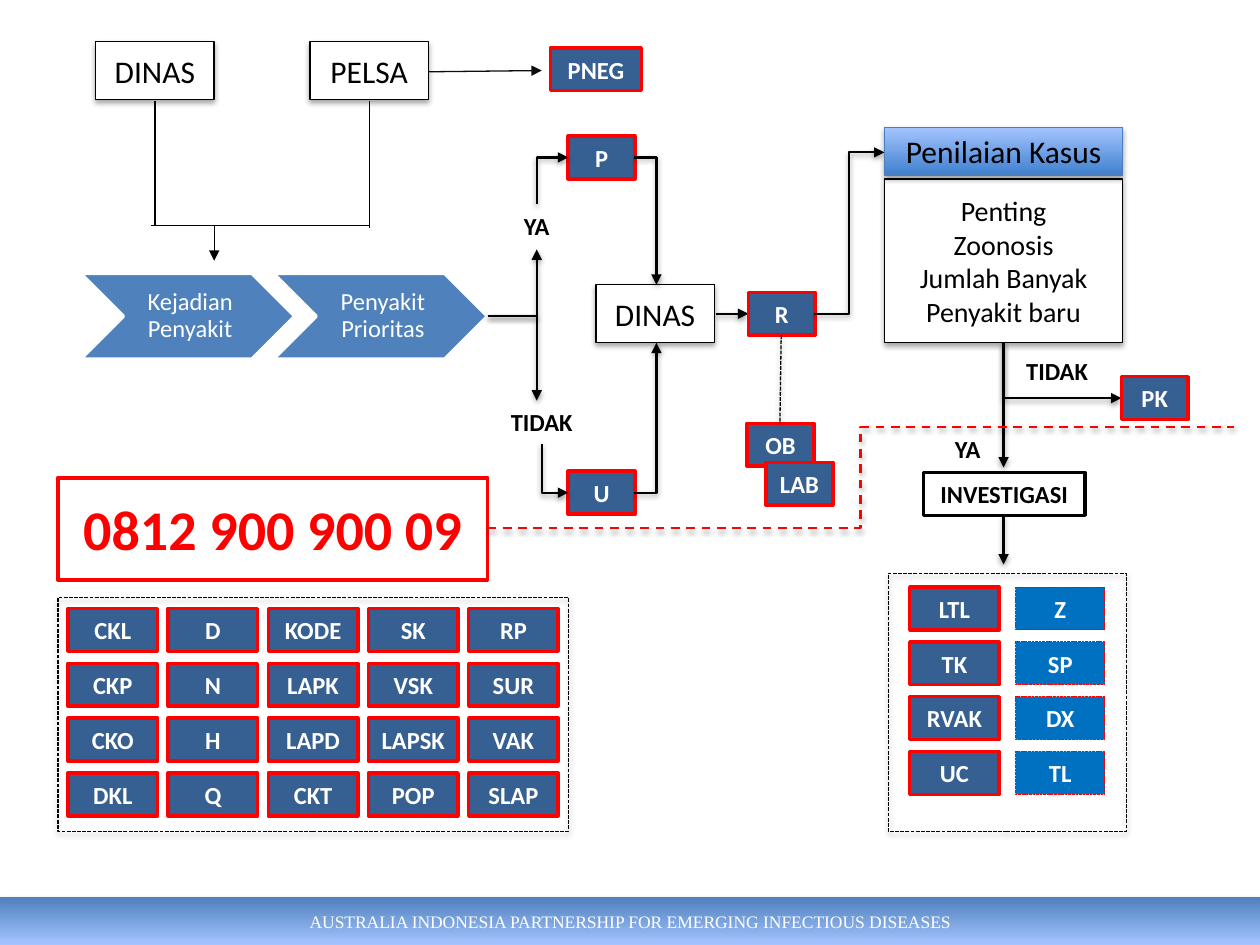
from lxml import etree
from pptx import Presentation
from pptx.dml.color import RGBColor
from pptx.enum.dml import MSO_LINE
from pptx.enum.shapes import MSO_CONNECTOR, MSO_SHAPE
from pptx.enum.text import MSO_ANCHOR, PP_ALIGN
from pptx.oxml.ns import qn
from pptx.util import Inches, Pt

RECT, CHEVRON = MSO_SHAPE.RECTANGLE, MSO_SHAPE.CHEVRON
STRAIGHT, ELBOW = MSO_CONNECTOR.STRAIGHT, MSO_CONNECTOR.ELBOW
DASH, FINE_DASH = MSO_LINE.DASH, MSO_LINE.SQUARE_DOT
MIDDLE, CENTER = MSO_ANCHOR.MIDDLE, PP_ALIGN.CENTER

BLACK, WHITE, RED = "000000", "FFFFFF", "FF0000"
NAVY, BLUE, STEEL, SKY = "376092", "0070C0", "4F81BD", "A4C4FF"
CODE_HEIGHT = 0.34
ROW_STEP = 0.435


def rgb(value):
    return RGBColor.from_string(value)


def add_shadow(drawn, opacity, distance):
    properties = drawn._element.spPr
    effects = properties.find(qn("a:effectLst"))
    if effects is None:
        effects = etree.SubElement(properties, qn("a:effectLst"))
    if opacity:
        shadow = etree.SubElement(effects, qn("a:outerShdw"), blurRad="40000",
                                  dist=str(distance), dir="5400000", rotWithShape="0")
        color = etree.SubElement(shadow, qn("a:srgbClr"), val=BLACK)
        etree.SubElement(color, qn("a:alpha"), val=str(opacity * 1000))


def write(frame, lines, size, color, bold=False, font="Calibri", spacing=None):
    frame.vertical_anchor = MIDDLE
    for index, line in enumerate(lines):
        paragraph = frame.paragraphs[0] if index == 0 else frame.add_paragraph()
        paragraph.alignment = CENTER
        paragraph.line_spacing = spacing
        run = paragraph.add_run()
        run.text = line
        run.font.name = font
        run.font.size = Pt(size)
        run.font.bold = bold
        run.font.color.rgb = rgb(color)


def panel(slide, left, top, width, height, fill=None, line=None, weight=0.75,
          dash=None, shadow=False, gradient=None, angle=0, form=RECT):
    shape = slide.shapes.add_shape(form, Inches(left), Inches(top), Inches(width), Inches(height))
    shape.shadow.inherit = False
    if gradient:
        shape.fill.gradient()
        shape.fill.gradient_angle = angle
        for stop, color in zip(shape.fill.gradient_stops, gradient):
            stop.color.rgb = rgb(color)
    elif fill:
        shape.fill.solid()
        shape.fill.fore_color.rgb = rgb(fill)
    else:
        shape.fill.background()
    if line:
        shape.line.color.rgb = rgb(line)
        shape.line.width = Pt(weight)
        if dash:
            shape.line.dash_style = dash
    else:
        shape.line.fill.background()
    if shadow:
        add_shadow(shape, 35, 23000)
    return shape


def code(slide, left, top, text, width=0.53, fill=NAVY, line=RED, weight=2, dash=None, color=WHITE):
    shape = panel(slide, left, top, width, CODE_HEIGHT, fill, line, weight, dash)
    shape.text_frame.word_wrap = False
    write(shape.text_frame, [text], 14, color, bold=True)


def office(slide, left, top, text):
    shape = panel(slide, left, top, 0.94, 0.46, WHITE, BLACK, shadow=True)
    write(shape.text_frame, [text], 18, BLACK)


def answer(slide, left, top, text, width):
    label = slide.shapes.add_textbox(Inches(left), Inches(top), Inches(width), Inches(CODE_HEIGHT))
    label.text_frame.word_wrap = True
    write(label.text_frame, [text], 14, BLACK, bold=True)


def link(slide, x1, y1, x2, y2, kind=STRAIGHT, weight=1.25, color=BLACK, arrow=True,
         dash=None, shadow=True):
    connector = slide.shapes.add_connector(kind, Inches(x1), Inches(y1), Inches(x2), Inches(y2))
    connector.line.color.rgb = rgb(color)
    connector.line.width = Pt(weight)
    if dash:
        connector.line.dash_style = dash
    properties = connector._element.spPr
    if arrow:
        etree.SubElement(properties.find(qn("a:ln")), qn("a:tailEnd"), type="triangle")
    add_shadow(connector, 38 if shadow else 0, 20000)
    return connector


def corner(slide, x1, y1, x2, y2, vertical_first=False):
    connector = link(slide, x1, y1, x2, y2, ELBOW)
    properties = connector._element.spPr
    properties.find(qn("a:prstGeom")).set("prst", "bentConnector2")
    if vertical_first:
        across, down = abs(x2 - x1), abs(y2 - y1)
        connector.left = Inches((x1 + x2 - down) / 2)
        connector.top = Inches((y1 + y2 - across) / 2)
        connector.width, connector.height = Inches(down), Inches(across)
        transform = properties.find(qn("a:xfrm"))
        transform.set("flipH", "1")
        transform.set("rot", "16200000" if y2 > y1 else "5400000")


def code_grid(slide, left, top, columns, step, **style):
    for column, names in enumerate(columns):
        for row, name in enumerate(names):
            code(slide, left + column * step, top + row * ROW_STEP, name, 0.71, **style)


def report_sources(slide, left, top):
    office(slide, left, top, "DINAS")
    office(slide, left + 1.7, top, "PELSA")
    code(slide, left + 3.61, top + 0.05, "PNEG", 0.72)
    plain = {"weight": 0.75, "shadow": False}
    join = top + 1.46
    link(slide, left + 0.47, top + 0.47, left + 0.47, join, arrow=False, **plain)
    link(slide, left + 2.17, top + 0.47, left + 2.17, join + 0.02, arrow=False, **plain)
    link(slide, left + 2.17, join, left + 0.44, join, arrow=False, **plain)
    link(slide, left + 0.94, join, left + 0.94, join + 0.28, **plain)
    link(slide, left + 2.64, top + 0.24, left + 3.54, top + 0.23, color="0D0D0D", **plain)


def event_steps(slide, left, top):
    for index, step in enumerate(("Kejadian Penyakit", "Penyakit Prioritas")):
        chevron = panel(slide, left + index * 1.53, top, 1.7, 0.68, STEEL, WHITE, 2, form=CHEVRON)
        frame = chevron.text_frame
        frame.word_wrap = True
        frame.margin_left = Inches(0.06)
        frame.margin_right = frame.margin_top = frame.margin_bottom = Inches(0.02)
        write(frame, [step], 14, WHITE, spacing=0.9)


def priority_branch(slide, left, top):
    middle, branch = top + 1.43, left + 0.39
    yes, no, entry = top + 0.17, top + 2.83, left + 0.64
    corner(slide, left, middle, branch, top + 2.1)
    corner(slide, left, middle, branch, top + 0.9)
    answer(slide, left + 0.1, top + 0.54, "YA", 0.58)
    answer(slide, left - 0.16, top + 2.1, "TIDAK", 1.18)
    code(slide, entry, top, "P")
    code(slide, entry, top + 2.66, "U")
    corner(slide, branch, top + 0.54, entry, yes, vertical_first=True)
    corner(slide, left + 0.43, top + 2.44, entry, no, vertical_first=True)
    office(slide, left + 0.86, top + 1.18, "DINAS")
    corner(slide, left + 1.16, yes, left + 1.34, top + 1.18)
    corner(slide, left + 1.16, no, left + 1.34, top + 1.64)


def response(slide, left, top):
    middle = top + 0.17
    link(slide, left - 0.26, middle, left, middle)
    code(slide, left, top, "R")
    link(slide, left + 0.52, middle, left + 1.08, top - 1.11, ELBOW)
    code(slide, left - 0.01, top + 1.04, "OB")
    code(slide, left + 0.14, top + 1.35, "LAB")
    link(slide, left + 0.26, top + 0.34, left + 0.25, top + 1.04, weight=0.75,
         arrow=False, dash=FINE_DASH)


def case_assessment(slide, left, top, width):
    center = left + width / 2
    criteria = panel(slide, left, top + 0.41, width, 1.3, WHITE, BLACK, shadow=True)
    write(criteria.text_frame, ["Penting", "Zoonosis", "Jumlah Banyak", "Penyakit baru"], 16, BLACK)
    heading = panel(slide, left, top, width, 0.38, line="4B7EBC", shadow=True,
                    gradient=("3F80CE", SKY), angle=90)
    write(heading.text_frame, ["Penilaian Kasus"], 18, BLACK)
    link(slide, center, top + 1.71, center, top + 2.7, weight=1.5)
    corner(slide, center, top + 1.71, left + 1.88, top + 2.15, vertical_first=True)
    code(slide, left + 1.88, top + 1.98, "PK")
    answer(slide, left + 0.37, top + 2.38, "YA", 0.58)
    answer(slide, left + 0.78, top + 1.76, "TIDAK", 1.18)
    code(slide, left + 0.31, top + 2.74, "INVESTIGASI", 1.28, fill=WHITE, line=BLACK, color=BLACK)
    link(slide, center, top + 3.08, center, top + 3.47)


def hotline(slide, left, top, width, height):
    number = panel(slide, left, top, width, height, WHITE, RED, 2.25)
    write(number.text_frame, ["0812 900 900 09"], 32, RED, bold=True)
    link(slide, left + width, top + 0.4, left + 9.33, top - 0.4, ELBOW,
         color=RED, arrow=False, dash=DASH)


def message_codes(slide, left, top, width, height):
    panel(slide, left, top, width, height, line=BLACK, dash=FINE_DASH, shadow=True)
    columns = [("CKL", "CKP", "CKO", "DKL"), ("D", "N", "H", "Q"),
               ("KODE", "LAPK", "LAPD", "CKT"), ("SK", "VSK", "LAPSK", "POP"),
               ("RP", "SUR", "VAK", "SLAP")]
    code_grid(slide, left + 0.08, top + 0.09, columns, 0.795)


def investigation_codes(slide, left, top, width, height):
    panel(slide, left, top, width, height, line=BLACK, dash=FINE_DASH, shadow=True)
    code_grid(slide, left + 0.17, top + 0.11, [("LTL", "TK", "RVAK", "UC")], 0)
    code_grid(slide, left + 1.01, top + 0.11, [("Z", "SP", "DX", "TL")], 0,
              fill=BLUE, weight=0.5, dash=FINE_DASH)


def footer(slide, left, top, width, height):
    band = panel(slide, left, top, width, height, gradient=(STEEL, SKY), angle=270, shadow=True)
    write(band.text_frame, ["AUSTRALIA INDONESIA PARTNERSHIP FOR EMERGING INFECTIOUS DISEASES"],
          10, WHITE, font="Times New Roman")


def main():
    deck = Presentation()
    deck.slide_width, deck.slide_height = Inches(10), Inches(7.5)
    slide = deck.slides.add_slide(deck.slide_layouts[6])
    footer(slide, 0, 7.12, 10, 0.38)
    event_steps(slide, 0.64, 2.17)
    priority_branch(slide, 3.87, 1.08)
    response(slide, 5.94, 2.32)
    case_assessment(slide, 7.02, 1.01, 1.89)
    hotline(slide, 0.46, 3.79, 3.41, 0.81)
    message_codes(slide, 0.46, 4.74, 4.05, 1.86)
    investigation_codes(slide, 7.05, 4.55, 1.89, 2.05)
    report_sources(slide, 0.76, 0.33)
    deck.save("out.pptx")


if __name__ == "__main__":
    main()
